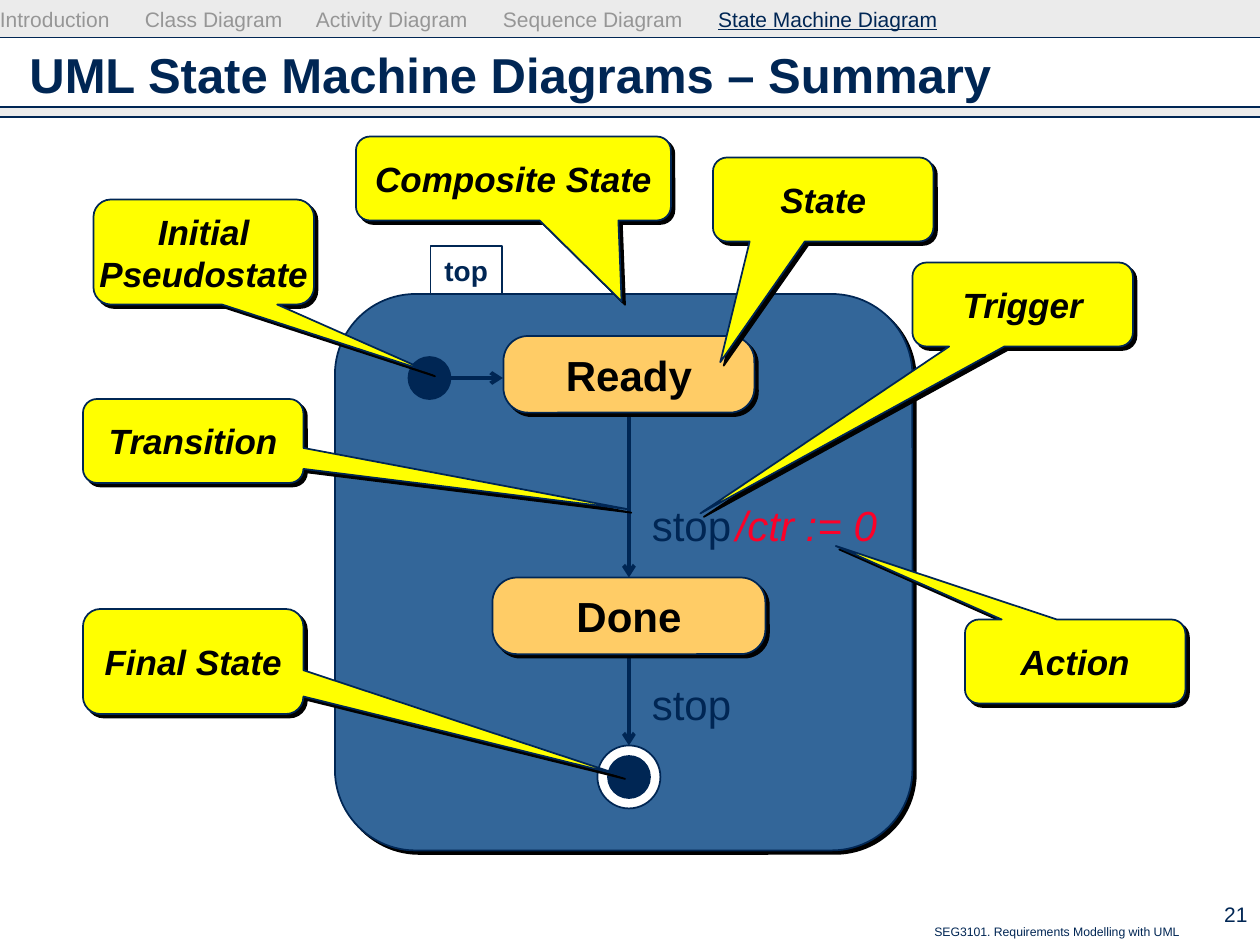
import pptx
import pptx.util
import pptx.dml.color
import pptx.enum.shapes
import pptx.enum.text
import pptx.oxml.ns
import lxml.etree

THEME = {
    "font": "Arial", "navy": "002654", "blue": "336699", "orange": "FFCC66",
    "yellow": "FFFF00", "white": "FFFFFF", "black": "000000", "red": "FC0128",
    "stripe": "CDCDCD", "muted": "969696",
    "title": 28, "state": 24, "callout": 20, "tab": 16, "small": 12, "footer": 7,
}
SHAPE = pptx.enum.shapes.MSO_SHAPE
ALIGN = pptx.enum.text.PP_ALIGN
ANCHOR = pptx.enum.text.MSO_ANCHOR
Color = pptx.dml.color.RGBColor.from_string
qn = pptx.oxml.ns.qn
add_xml = lxml.etree.SubElement

deck = pptx.Presentation()
deck.slide_width = pptx.util.Inches(10)
deck.slide_height = pptx.util.Inches(7.5)
CELL = deck.slide_width / 120
page = deck.slides.add_slide(deck.slide_layouts[5])


def add_box(kind, area, fill, line="navy", shadow=False):
    box = page.shapes.add_shape(kind, *[round(n * CELL) for n in area])
    box.fill.solid()
    box.fill.fore_color.rgb = Color(THEME[fill])
    if line:
        box.line.color.rgb = Color(THEME[line])
        box.line.width = pptx.util.Pt(1)
    else:
        box.line.fill.background()
    box.shadow.inherit = False
    if shadow:
        effects = box._element.spPr.find(qn("a:effectLst"))
        outer = add_xml(effects, qn("a:outerShdw"), dist="35560", dir="2700000",
                        algn="ctr", rotWithShape="0")
        add_xml(outer, qn("a:srgbClr"), val=THEME["black"])
    return box


def write(box, runs, size, align=ALIGN.CENTER, anchor=ANCHOR.MIDDLE, wrap=False,
          bold=None, italic=None):
    frame = box.text_frame
    frame.word_wrap = wrap
    frame.vertical_anchor = anchor
    para = frame.paragraphs[0]
    for text, color in runs:
        if text == "\n":
            para = frame.add_paragraph()
            continue
        span = para.add_run()
        span.text = text
        span.font.name = THEME["font"]
        span.font.size = pptx.util.Pt(THEME[size])
        span.font.color.rgb = Color(THEME[color])
        span.font.bold = bold
        span.font.italic = italic
    for para in frame.paragraphs:
        para.alignment = align


for top, height in [(0, 3.6), (10.2, 0.9)]:
    stripe = add_box(SHAPE.RECTANGLE, (0, top, 120, height), "stripe", line=None)
    tint = stripe._element.spPr.find(qn("a:solidFill"))[0]
    add_xml(tint, qn("a:alpha"), val="40000")

title = page.shapes.title
title.left, title.top, title.width, title.height = [
    round(n * CELL) for n in (1.6, 3.1, 116.9, 7.9)]
write(title, [("UML State Machine Diagrams – Summary", "navy")], "title",
      align=ALIGN.LEFT, wrap=True, bold=True)

composite = add_box(SHAPE.ROUNDED_RECTANGLE, (31.9, 28, 55, 53), "blue", shadow=True)
composite.adjustments[0] = 0.145
name_tab = add_box(SHAPE.RECTANGLE, (41, 23.4, 6.8, 4.6), "white")
write(name_tab, [("top", "navy")], "tab", bold=True)

AXIS = 59.9
INITIAL = 40.9
lines = [
    ((0, 3.6), (120, 3.6), False),
    ((0, 10.2), (120, 10.2), False),
    ((0, 11.15), (120, 11.15), False),
    ((INITIAL, 36), (47.9, 36), True),
    ((AXIS, 39), (AXIS, 55), True),
    ((AXIS, 62), (AXIS, 71), True),
]
for start, end, is_arrow in lines:
    line = page.shapes.add_connector(
        pptx.enum.shapes.MSO_CONNECTOR.STRAIGHT,
        *[round(n * CELL) for n in start + end])
    line.line.color.rgb = Color(THEME["navy"])
    line.line.width = pptx.util.Pt(2.25 if is_arrow else 0.75)
    if is_arrow:
        add_xml(line.line._get_or_add_ln(), qn("a:tailEnd"), type="arrow")
    add_xml(line._element.spPr, qn("a:effectLst"))

for center, middle, size, fill in [(INITIAL, 36, 4, "navy"), (AXIS, 74, 6, "white"),
                                   (AXIS, 74, 4, "navy")]:
    add_box(SHAPE.OVAL, (center - size / 2, middle - size / 2, size, size), fill)

for name, top, width in [("Ready", 32, 23.9), ("Done", 55, 26)]:
    state = add_box(SHAPE.ROUNDED_RECTANGLE, (AXIS - width / 2, top, width, 7.3),
                    "orange", shadow=True)
    state.adjustments[0] = 0.32
    write(state, [(name, "black")], "state", wrap=True, bold=True)

labels = [
    ("stop", (60.9, 47, 12, 6), "navy", "state", ALIGN.LEFT, False),
    ("/ctr := 0", (68.9, 47, 18, 6), "red", "state", ALIGN.LEFT, True),
    ("stop", (60.9, 64, 12, 6), "navy", "state", ALIGN.LEFT, False),
    ("SEG3101. Requirements Modelling with UML", (39, 87.4, 74.5, 2.6), "navy",
     "footer", ALIGN.RIGHT, False),
    ("21", (111.6, 85, 8.4, 4.1), "navy", "small", ALIGN.RIGHT, False),
]
for text, area, color, size, align, italic in labels:
    label = page.shapes.add_textbox(*[round(n * CELL) for n in area])
    write(label, [(text, color)], size, align=align, wrap=True, italic=italic)

callouts = [
    (["State"], (67.9, 15, 21, 8), (68.6, 34.5)),
    (["Trigger"], (86.9, 25, 21, 8), (66.7, 48.9)),
    (["Action"], (91.9, 59, 21, 8), (79.6, 52)),
    (["Initial", "\n", "Pseudostate"], (8.9, 19, 21, 10), (41.1, 35.5)),
    (["Transition"], (7.9, 38, 21, 8), (59.8, 48.5)),
    (["Final State"], (7.9, 58, 21, 10), (59.2, 73.85)),
    (["Composite State"], (33.9, 13, 30, 8), (59.2, 28.7)),
]
for words, area, tip in callouts:
    callout = add_box(SHAPE.ROUNDED_RECTANGULAR_CALLOUT, area, "yellow", shadow=True)
    left, top, width, height = area
    callout.adjustments[0] = (tip[0] - left) / width - 0.5
    callout.adjustments[1] = (tip[1] - top) / height - 0.5
    write(callout, [(word, "black") for word in words], "callout", bold=True, italic=True)

menu = page.shapes.add_textbox(0, round(0.6 * CELL), round(95 * CELL), round(3 * CELL))
menu.text_frame.margin_left = menu.text_frame.margin_top = 0
tabs = add_xml(menu.text_frame.paragraphs[0]._p.get_or_add_pPr(), qn("a:tabLst"))
for stop in (13.8, 30.1, 47.9, 68.4):
    add_xml(tabs, qn("a:tab"), pos=str(round(stop * CELL)), algn="l")
sections = ["Introduction", "Class Diagram", "Activity Diagram", "Sequence Diagram"]
write(menu, [(section + "\t", "muted") for section in sections]
      + [("State Machine Diagram", "navy")], "small", align=ALIGN.LEFT,
      anchor=ANCHOR.TOP, wrap=True)
menu.text_frame.paragraphs[0].runs[-1].font.underline = True

deck.save("out.pptx")
